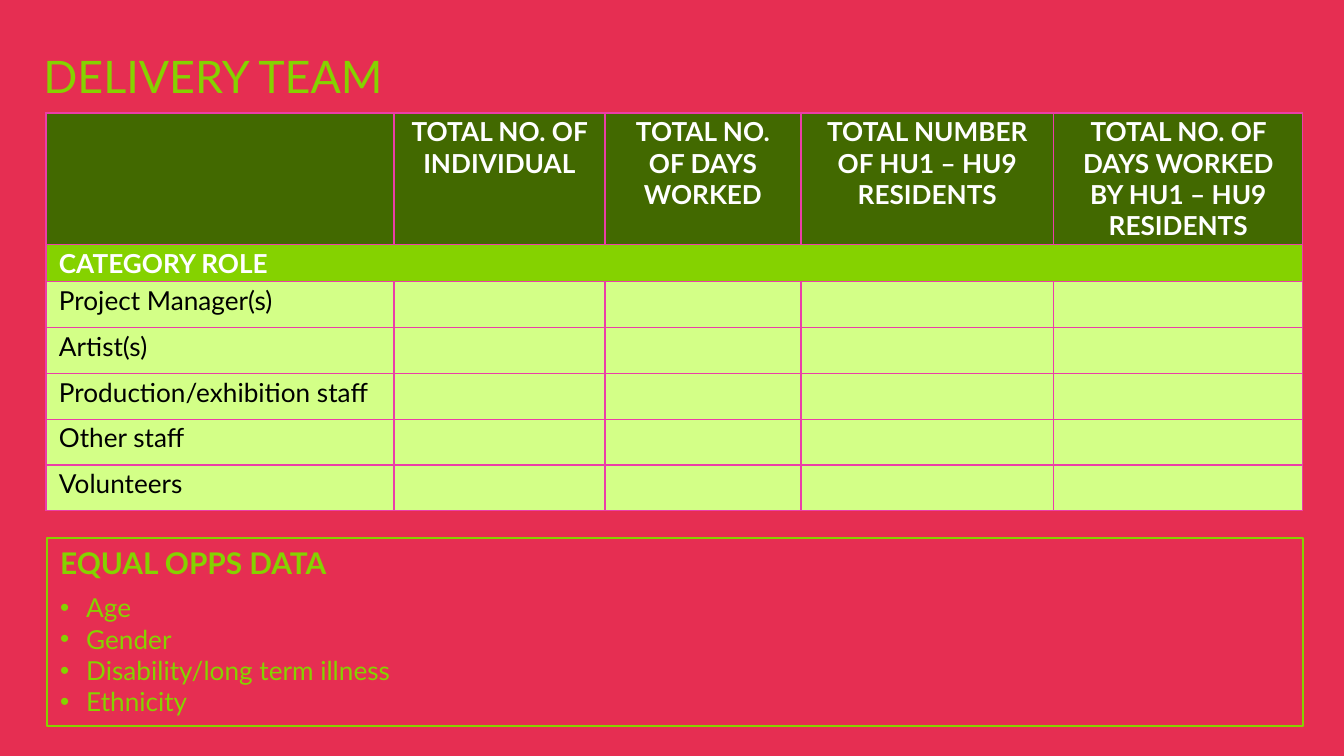
from lxml import etree
from pptx import Presentation
from pptx import util as u
from pptx.dml import color
from pptx.enum import shapes, text
from pptx.oxml import ns

PX = 914400 / 134.4
FONT = "Lato"
RED, LIME, FOREST, PALE, PINK = "E62E52", "85D200", "426900", "D3FF87", "EB3EA8"
HEADINGS = [
    "",
    "TOTAL NO. OF INDIVIDUAL",
    "TOTAL NO. OF DAYS WORKED",
    "TOTAL NUMBER OF HU1 – HU9 RESIDENTS",
    "TOTAL NO. OF DAYS WORKED BY HU1 – HU9 RESIDENTS",
]
ROLES = ["Project Manager(s)", "Artist(s)", "Production/exhibition staff",
         "Other staff", "Volunteers"]
EQUAL_OPPS = ["Age", "Gender", "Disability/long term illness", "Ethnicity"]
COLUMN_WIDTHS = [348, 211, 196, 253, 249]
HEADING_HEIGHT, CATEGORY_HEIGHT = 131, 36


def px(length):
    """Turn a length in px into EMU."""
    return u.Emu(round(length * PX))


def paint(target, hex_code):
    """Give a fill a solid colour."""
    target.solid()
    target.fore_color.rgb = color.RGBColor.from_string(hex_code)


def write(paragraph, words, size=14, hex_code=LIME, bold=False,
          align=text.PP_ALIGN.LEFT, after=0, bullet_indent=0):
    """Write formatted words into a paragraph."""
    run = paragraph.add_run()
    run.text = words
    run.font.name = FONT
    run.font.size = u.Pt(size)
    run.font.bold = bold
    paint(run.font.fill, hex_code)
    paragraph.alignment = align
    paragraph.space_after = u.Pt(after)
    if bullet_indent:
        properties = paragraph._p.get_or_add_pPr()
        properties.set("marL", str(px(bullet_indent)))
        properties.set("indent", str(-px(bullet_indent)))
        bullet_font = etree.SubElement(properties, ns.qn("a:buFont"))
        bullet_font.set("typeface", "Arial")
        etree.SubElement(properties, ns.qn("a:buChar")).set("char", "•")


def border(cell):
    """Draw thin pink lines around a cell."""
    properties = cell._tc.get_or_add_tcPr()
    for side in ("lnL", "lnR", "lnT", "lnB"):
        line = etree.SubElement(properties, ns.qn(f"a:{side}"), w=str(u.Pt(0.75)))
        solid = etree.SubElement(line, ns.qn("a:solidFill"))
        etree.SubElement(solid, ns.qn("a:srgbClr"), val=PINK)


def fill_cell(cell, words, background, **form):
    """Format a table cell and write its words."""
    cell.margin_left = cell.margin_right = px(13)
    cell.margin_top = cell.margin_bottom = px(3)
    border(cell)
    paint(cell.fill, background)
    write(cell.text_frame.paragraphs[0], words, **form)


def place_title(slide, left, top, width, height):
    """Place the slide title in its box."""
    title = slide.shapes.title
    title.left, title.top, title.width, title.height = map(
        px, (left, top, width, height))
    title.text_frame.vertical_anchor = text.MSO_ANCHOR.MIDDLE
    write(title.text_frame.paragraphs[0], "DELIVERY TEAM", size=24)


def place_team_table(slide, left, top, width, height):
    """Place the table of roles and totals in its box."""
    team = slide.shapes.add_table(
        len(ROLES) + 2, len(HEADINGS), *map(px, (left, top, width, height))).table
    team.first_row = team.horz_banding = False
    for column, column_width in zip(team.columns, COLUMN_WIDTHS):
        column.width = px(column_width)
    role_height = (height - HEADING_HEIGHT - CATEGORY_HEIGHT) / len(ROLES)
    row_heights = [HEADING_HEIGHT, CATEGORY_HEIGHT] + [role_height] * len(ROLES)
    for row, row_height in zip(team.rows, row_heights):
        row.height = px(row_height)

    for index, heading in enumerate(HEADINGS):
        fill_cell(team.cell(0, index), heading, FOREST, hex_code="FFFFFF",
                  bold=True, align=text.PP_ALIGN.CENTER)
    category = team.cell(1, 0)
    category.merge(team.cell(1, len(HEADINGS) - 1))
    fill_cell(category, "CATEGORY ROLE", LIME, hex_code="FFFFFF", bold=True)
    for row_index, role in enumerate(ROLES, 2):
        for index in range(len(HEADINGS)):
            fill_cell(team.cell(row_index, index), "" if index else role, PALE,
                      hex_code="000000")


def place_equal_opps(slide, left, top, width, height):
    """Place the outlined list of equal opportunities data in its box."""
    panel = slide.shapes.add_shape(
        shapes.MSO_SHAPE.RECTANGLE, *map(px, (left, top, width, height)))
    panel.shadow.inherit = False
    panel.fill.background()
    paint(panel.line.fill, LIME)
    panel.line.width = u.Pt(1)
    frame = panel.text_frame
    frame.word_wrap = True
    frame.vertical_anchor = text.MSO_ANCHOR.TOP
    write(frame.paragraphs[0], "EQUAL OPPS DATA", size=16, bold=True, after=6)
    for topic in EQUAL_OPPS:
        write(frame.add_paragraph(), topic, bullet_indent=26)


def main():
    """Build and save the delivery team slide."""
    deck = Presentation()
    deck.slide_width, deck.slide_height = px(1344), px(756)
    slide = deck.slides.add_slide(deck.slide_layouts.get_by_name("Title Only"))
    paint(slide.background.fill, RED)
    place_title(slide, 30, 42, 1208, 67)
    place_team_table(slide, 46, 113, sum(COLUMN_WIDTHS), 396)
    place_equal_opps(slide, 47, 538, 1256, 188)
    deck.save("out.pptx")


if __name__ == "__main__":
    main()
